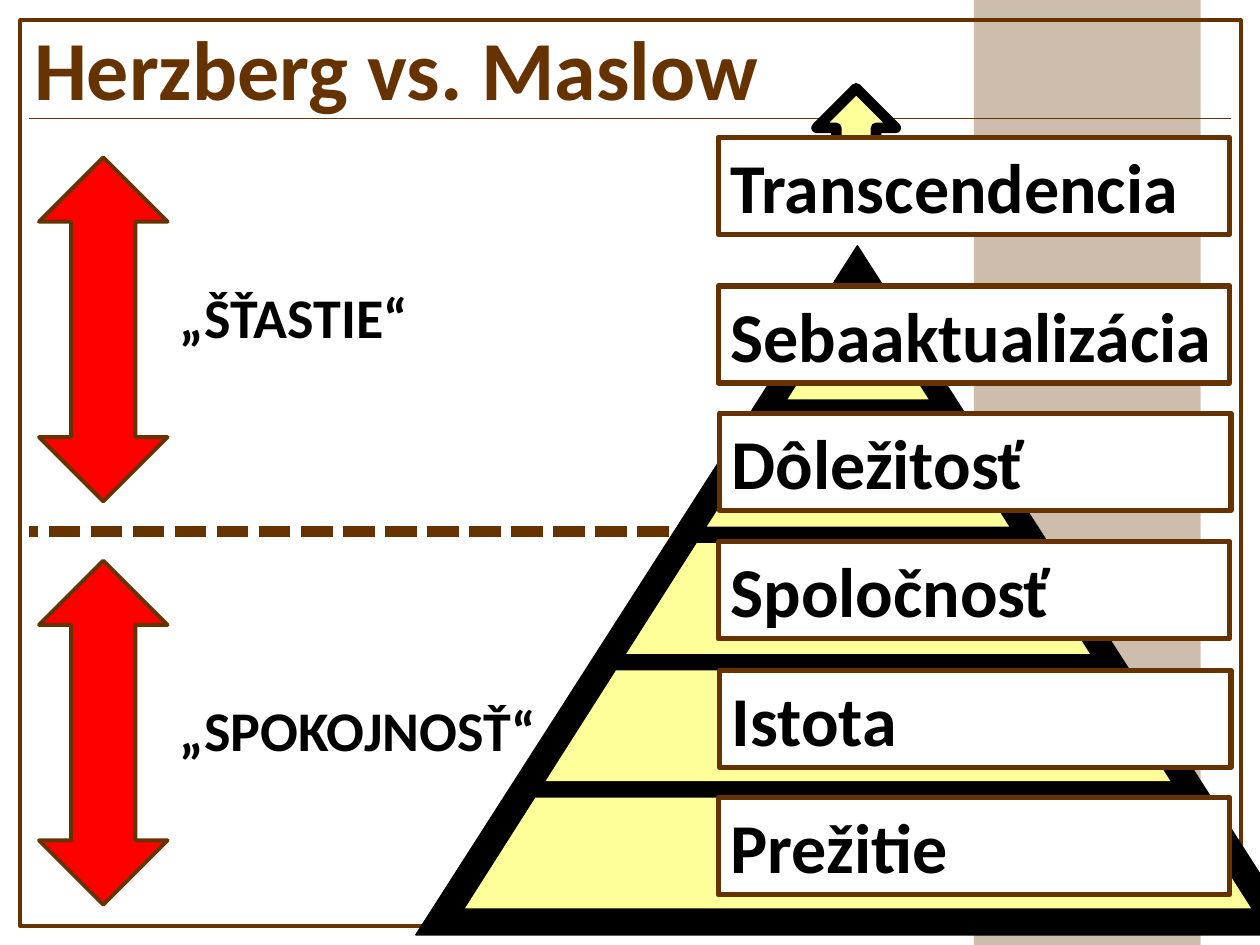
"""Build a slide that compares Herzberg's two factors with Maslow's pyramid."""
from dataclasses import dataclass
from typing import Optional

from pptx import Presentation
from pptx.dml.color import RGBColor
from pptx.enum import dml, shapes, text
from pptx.oxml import xmlchemy as xc
from pptx.util import Inches, Pt

BROWN = RGBColor(0x66, 0x33, 0x00)
RED = RGBColor(0xFF, 0x00, 0x00)
CREAM = RGBColor(0xFF, 0xFF, 0x99)
BLACK = RGBColor(0x00, 0x00, 0x00)
WHITE = RGBColor(0xFF, 0xFF, 0xFF)
KIND = shapes.MSO_SHAPE


@dataclass
class Box:
    left: float
    top: float
    width: float
    height: float


@dataclass
class Level:
    name: str
    left: float
    top: float


@dataclass
class Factor:
    name: str
    top: float
    label: Box


LEVELS = [
    Level("Istota", 5.71, 5.32),
    Level("Spoločnosť", 5.7, 4.3),
    Level("Dôležitosť", 5.71, 3.28),
    Level("Transcendencia", 5.7, 1.09),
    Level("Prežitie", 5.7, 6.33),
    Level("Sebaaktualizácia", 5.7, 2.27),
]
FACTORS = [
    Factor("„SPOKOJNOSŤ“", 4.45, Box(1.33, 5.47, 3.05, 0.64)),
    Factor("„ŠŤASTIE“", 1.25, Box(1.33, 2.19, 2.03, 0.64)),
]


def place(box: Box) -> list:
    return [Inches(v) for v in (box.left, box.top, box.width, box.height)]


def style(shape, fill: Optional[RGBColor], line: Optional[RGBColor], width: float = 0):
    shape.shadow.inherit = False
    if fill is None:
        shape.fill.background()
    else:
        shape.fill.solid()
        shape.fill.fore_color.rgb = fill
    if line is None:
        shape.line.fill.background()
    else:
        shape.line.color.rgb = line
        shape.line.width = Pt(width)
        xc.OxmlElement("a:round")
        shape.line._get_or_add_ln().append(xc.OxmlElement("a:round"))


def draw(parent, kind, box: Box, fill, line=None, width: float = 0):
    shape = parent.add_shape(kind, *place(box))
    style(shape, fill, line, width)
    return shape


def write(frame, words: str, size: int, color: RGBColor, wrap: bool = True):
    frame.text = words
    frame.word_wrap = wrap
    frame.vertical_anchor = text.MSO_ANCHOR.TOP
    para = frame.paragraphs[0]
    para.alignment = text.PP_ALIGN.LEFT
    font = para.runs[0].font
    font.name, font.size, font.bold = "Calibri", Pt(size), True
    font.color.rgb = color


def rule(tree, left: float, right: float, top: float, width: float):
    line = tree.add_connector(shapes.MSO_CONNECTOR.STRAIGHT, Inches(left),
                              Inches(top), Inches(right), Inches(top))
    line.line.color.rgb = BROWN
    line.line.width = Pt(width)
    line._element.spPr.append(xc.OxmlElement("a:effectLst"))
    return line


def pyramid(tree):
    group = tree.add_group_shape().shapes
    draw(group, KIND.ISOSCELES_TRIANGLE, Box(3.3, 1.95, 7.01, 5.47), BLACK, BLACK, 0.75)
    mid = 6.81
    for step in range(5):
        top, half = 2.29 + 1.01 * step, 0.64 * step
        low, base = top + 0.88, half + 0.56
        points = [(mid + half, top), (mid + base, low), (mid - base, low)]
        path = group.build_freeform(Inches(mid - half), Inches(top))
        path.add_line_segments([(Inches(x), Inches(y)) for x, y in points])
        style(path.convert_to_shape(), CREAM, None)


def main():
    deck = Presentation()
    deck.slide_width, deck.slide_height = Inches(10), Inches(7.5)
    slide = deck.slides.add_slide(deck.slide_layouts[5])
    tree = slide.shapes

    title = tree.title
    title.left, title.top, title.width, title.height = place(Box(0.17, 0.08, 9.68, 0.91))
    write(title.text_frame, "Herzberg vs. Maslow", 48, BROWN)

    band = draw(tree, KIND.RECTANGLE, Box(7.73, 0, 1.8, 7.5), BROWN)
    alpha = xc.OxmlElement("a:alpha")
    alpha.set("val", "32000")
    band._element.spPr.find(".//{*}srgbClr").append(alpha)
    draw(tree, KIND.RECTANGLE, Box(0.16, 0.16, 9.69, 7.19), None, BROWN, 2)
    rule(tree, 0.23, 9.77, 0.94, 0.75)

    pyramid(tree)
    arrow = draw(tree, KIND.DOWN_ARROW, Box(6.48, 0.7, 0.63, 1.09), CREAM, BLACK, 6)
    arrow.rotation = 180
    for level in LEVELS:
        box = Box(level.left, level.top, 4.06, 0.77)
        shape = draw(tree, KIND.RECTANGLE, box, WHITE, BROWN, 3)
        write(shape.text_frame, level.name, 40, BLACK)

    split = rule(tree, 5.31, 0.23, 4.22, 6)
    split.line.dash_style = dml.MSO_LINE.SQUARE_DOT
    for factor in FACTORS:
        box = Box(0.31, factor.top, 1.02, 2.73)
        draw(tree, KIND.UP_DOWN_ARROW, box, RED, BROWN, 2.25)
        label = tree.add_textbox(*place(factor.label))
        write(label.text_frame, factor.name, 32, BLACK, False)

    deck.save("out.pptx")


if __name__ == "__main__":
    main()
